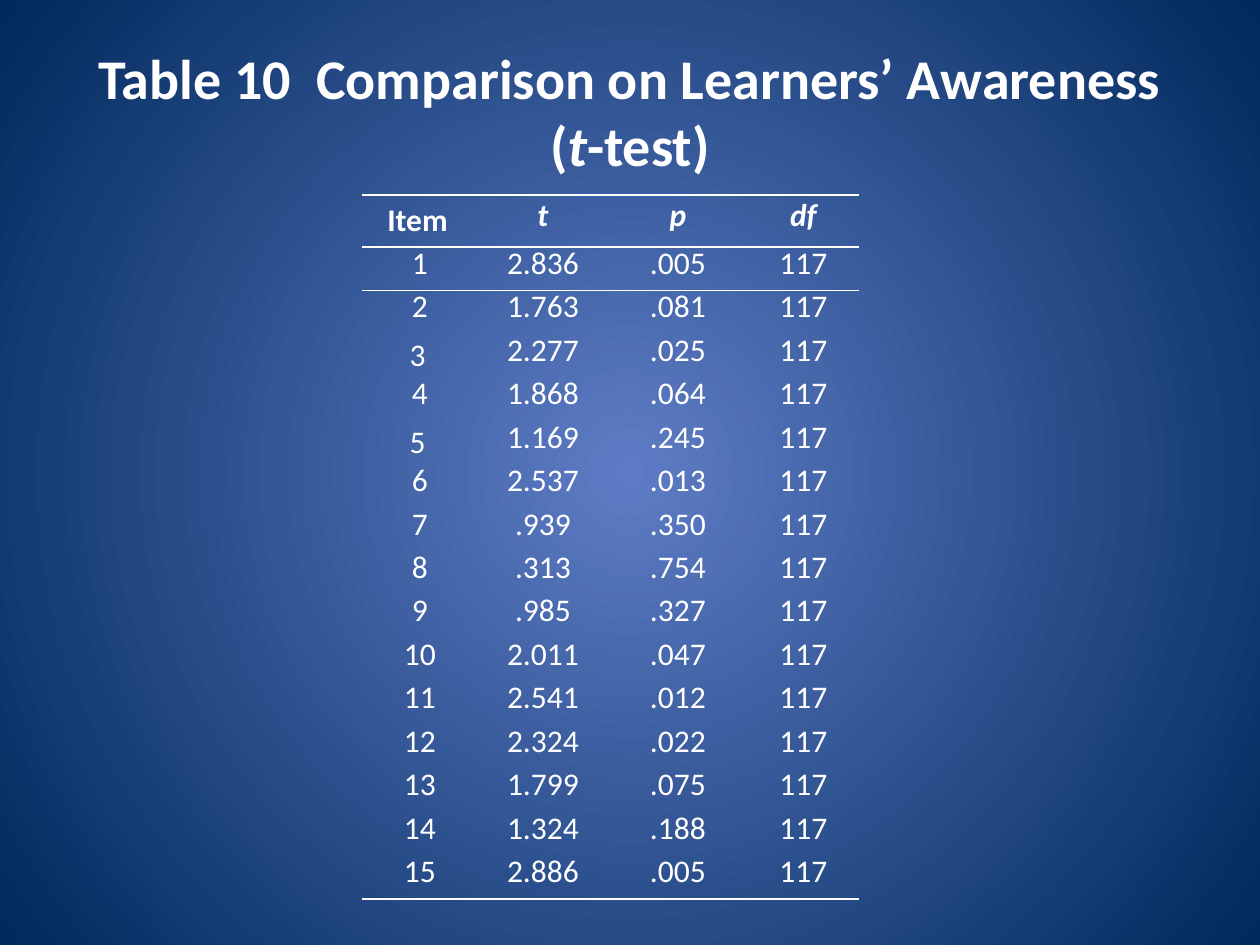
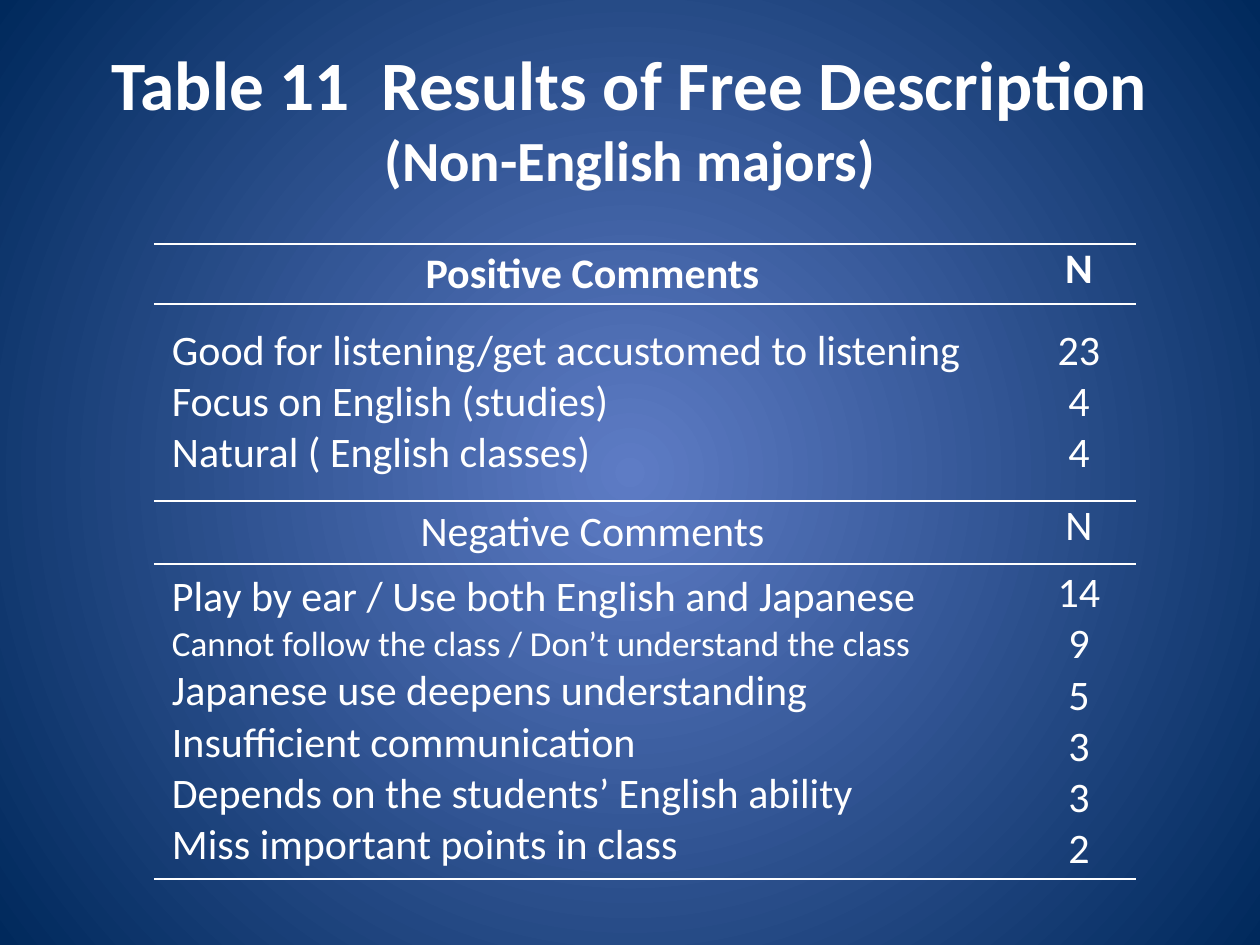
from lxml import etree
from pptx import Presentation
from pptx import util as u
from pptx.dml.color import RGBColor
from pptx.enum import text
from pptx.oxml import ns

PX = 914400 / 126
FONT = "Calibri"
WHITE = "FFFFFF"
GLOW = "5E7CC5"
NAVY = "00295C"
PLAIN_TABLE_STYLE = "{2D5ABB26-0587-4C30-8999-92F81FD0307C}"
CENTER = text.PP_ALIGN.CENTER
JUSTIFY = text.PP_ALIGN.JUSTIFY
MIDDLE = text.MSO_ANCHOR.MIDDLE
TOP = text.MSO_ANCHOR.TOP

T_TESTS = [
    ("2.836", ".005"), ("1.763", ".081"), ("2.277", ".025"),
    ("1.868", ".064"), ("1.169", ".245"), ("2.537", ".013"),
    (".939", ".350"), (".313", ".754"), (".985", ".327"),
    ("2.011", ".047"), ("2.541", ".012"), ("2.324", ".022"),
    ("1.799", ".075"), ("1.324", ".188"), ("2.886", ".005"),
]
DEGREES_OF_FREEDOM = "117"
LOOSE_ITEMS = (3, 5)

POSITIVE_COMMENTS = [
    ("Good for listening/get accustomed to listening", 24, "23"),
    ("Focus on English (studies)", 24, "4"),
    ("Natural ( English classes)", 24, "4"),
]
NEGATIVE_COMMENTS = [
    ("Play by ear / Use both English and Japanese", 24, "14"),
    ("Cannot follow the class / Don’t understand the class", 20, "9"),
    ("Japanese use deepens understanding", 24, "5"),
    ("Insufficient communication", 24, "3"),
    ("Depends on the students’ English ability", 24, "3"),
    ("Miss important points in class", 24, "2"),
]


def px(length):
    return u.Emu(round(length * PX))


def color(value):
    return RGBColor.from_string(value)


def add_run(paragraph, words, size, bold=False, italic=False):
    run = paragraph.add_run()
    run.text = words
    font = run.font
    font.name, font.size = FONT, u.Pt(size)
    font.bold, font.italic = bold, italic
    font.color.rgb = color(WHITE)


def add_slide(presentation):
    slide = presentation.slides.add_slide(presentation.slide_layouts[6])
    fill = slide.background.fill
    fill.gradient()
    for stop, shade in zip(fill.gradient_stops, (GLOW, NAVY)):
        stop.color.rgb = color(shade)
    gradient = next(slide.element.iter(ns.qn("a:gradFill")))
    gradient.remove(gradient.find(ns.qn("a:lin")))
    path = etree.SubElement(gradient, ns.qn("a:path"), path="circle")
    center = {side: "50000" for side in "ltrb"}
    etree.SubElement(path, ns.qn("a:fillToRect"), center)
    return slide


def add_title(slide, top, height, runs):
    frame = slide.shapes.add_textbox(px(63), px(top), px(1134), px(height)).text_frame
    frame.word_wrap = True
    frame.vertical_anchor = MIDDLE
    paragraph = frame.paragraphs[0]
    paragraph.alignment = CENTER
    for words, size, italic in runs:
        add_run(paragraph, words, size, bold=True, italic=italic)


def add_plain_table(slide, left, top, widths, heights):
    frame = slide.shapes.add_table(len(heights), len(widths), px(left), px(top),
                                   px(sum(widths)), px(sum(heights)))
    table = frame.table
    table.first_row = table.horz_banding = False
    next(frame.element.iter(ns.qn("a:tableStyleId"))).text = PLAIN_TABLE_STYLE
    for column, width in zip(table.columns, widths):
        column.width = px(width)
    for row, height in zip(table.rows, heights):
        row.height = px(height)
    for cell in table.iter_cells():
        cell.margin_left = cell.margin_right = px(9)
        cell.margin_top = cell.margin_bottom = 0
        cell.vertical_anchor = MIDDLE
    return table


def rule_row(row, sides):
    for cell in row.cells:
        properties = cell._tc.get_or_add_tcPr()
        for side in sides:
            line = etree.SubElement(properties, ns.qn("a:ln" + side), w=str(u.Pt(1)))
            solid = etree.SubElement(line, ns.qn("a:solidFill"))
            etree.SubElement(solid, ns.qn("a:srgbClr"), val=WHITE)


def clear_fills(table):
    for cell in table.iter_cells():
        cell.fill.background()


def write_cell(cell, lines, align=CENTER, indent=0, spacing=None, bold=False, italic=False):
    frame = cell.text_frame
    for index, (words, size) in enumerate(lines):
        paragraph = frame.add_paragraph() if index else frame.paragraphs[0]
        paragraph.alignment = align
        paragraph.line_spacing = spacing
        if indent:
            paragraph._p.get_or_add_pPr().set("marL", str(px(indent)))
        add_run(paragraph, words, size, bold, italic)


def add_t_test_table(slide):
    header, body = 52, 652
    count = len(T_TESTS)
    table = add_plain_table(slide, 362, 195, [111, 135, 135, 116],
                            [header] + [body / count] * count)
    tight = {"indent": 5, "spacing": u.Pt(16)}
    for column, label in enumerate(("Item", "t", "p", "df")):
        style = {**tight, "italic": True} if column else {}
        write_cell(table.cell(0, column), [(label, 18)], bold=True, **style)
    for item, (t_value, p_value) in enumerate(T_TESTS, 1):
        values = (str(item), t_value, p_value, DEGREES_OF_FREEDOM)
        for column, value in enumerate(values):
            loose = column == 0 and item in LOOSE_ITEMS
            write_cell(table.cell(item, column), [(value, 18)], **({} if loose else tight))
    rule_row(table.rows[0], "TB")
    rule_row(table.rows[1], "T")
    rule_row(table.rows[count], "B")
    clear_fills(table)


def add_comment_table(slide):
    table = add_plain_table(slide, 154, 244, [868, 114], [60, 197, 63, 315])
    groups = (("Positive Comments", True, POSITIVE_COMMENTS),
              ("Negative Comments", False, NEGATIVE_COMMENTS))
    for index, (heading, bold, comments) in enumerate(groups):
        head = 2 * index
        write_cell(table.cell(head, 0), [(heading, 24)], indent=9, bold=bold)
        write_cell(table.cell(head, 1), [("N", 24)], bold=bold)
        table.cell(head, 1).vertical_anchor = TOP
        write_cell(table.cell(head + 1, 0), [(words, size) for words, size, _ in comments],
                   align=JUSTIFY, indent=9)
        write_cell(table.cell(head + 1, 1), [(number, 24) for _, _, number in comments])
    for row in table.rows:
        rule_row(row, "TB")
    clear_fills(table)


def main():
    presentation = Presentation()
    presentation.slide_width, presentation.slide_height = px(1260), px(945)

    slide = add_slide(presentation)
    add_title(slide, 76, 69, [("Table 10  Comparison on Learners’ Awareness (", 32, False),
                              ("t", 32, True), ("-test)", 32, False)])
    add_t_test_table(slide)

    slide = add_slide(presentation)
    add_title(slide, 38, 158, [("Table 11  Results of Free Description ", 39.6, False),
                               ("(Non-English majors)", 32.4, False)])
    add_comment_table(slide)

    presentation.save("out.pptx")


if __name__ == "__main__":
    main()
